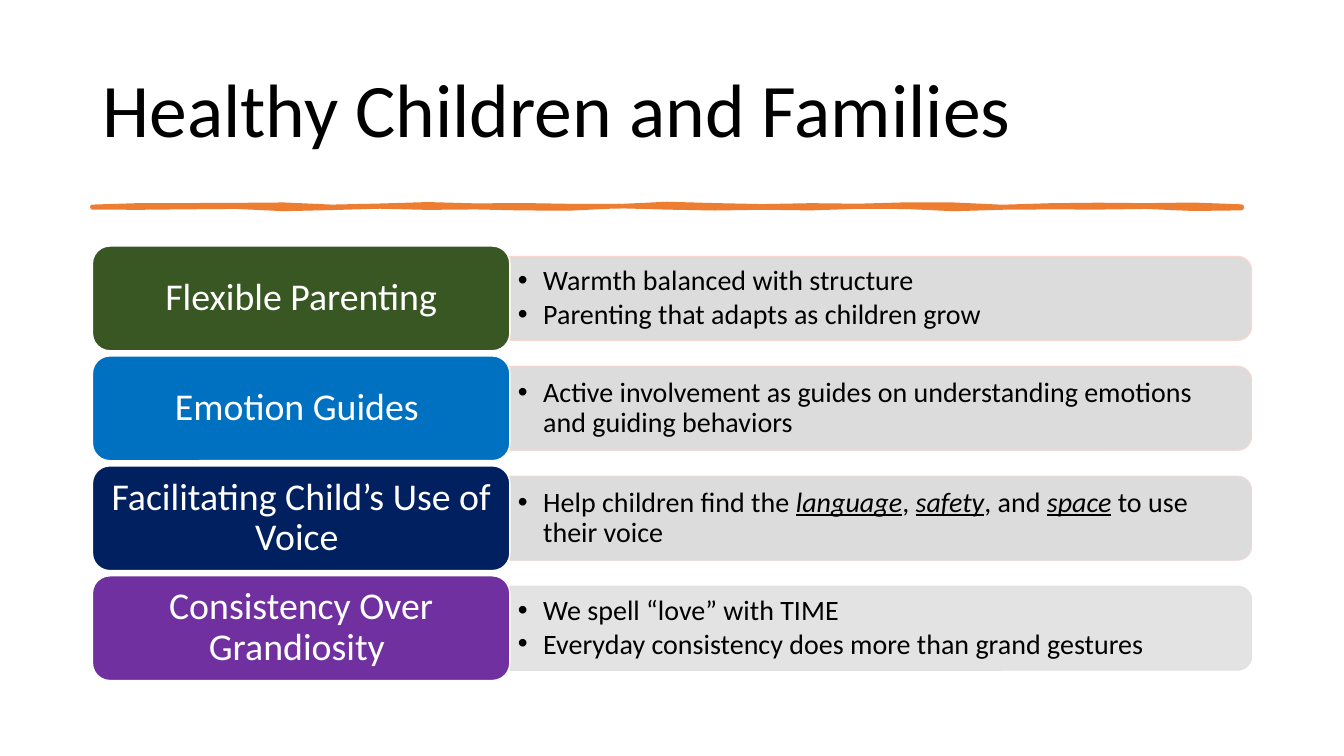
from dataclasses import dataclass
from math import sin
from lxml import etree
from pptx import Presentation
from pptx import util as u
from pptx.dml.color import RGBColor
from pptx.enum import shapes, text
from pptx.oxml import ns

Cm, Pt = u.Cm, u.Pt


@dataclass(frozen=True)
class Theme:
    font: str = "Calibri"
    ink: str = "000000"
    pale: str = "FFFFFF"
    brush: str = "ED7D31"
    head: float = 54
    label: float = 27
    body: float = 20


THEME = Theme()

# label, label fill, bar fill, bar edge, points; asterisks mark stressed words
ROWS = [
    ("Flexible Parenting", "385723", "D9D9D9", "F8D7CE",
     ["Warmth balanced with structure",
      "Parenting that adapts as children grow"]),
    ("Emotion Guides ", "0070C0", "D9D9D9", "F1D8D4",
     ["Active involvement as guides on understanding emotions "
      "and guiding behaviors"]),
    ("Facilitating Child’s Use of Voice ", "002060", "D9D9D9", "E9DBDA",
     ["Help children find the *language*, *safety*, and *space* "
      "to use their voice"]),
    ("Consistency Over Grandiosity ", "7030A0", "E1E1E1", "E1E1E1",
     ["We spell “love” with TIME",
      "Everyday consistency does more than grand gestures"]),
]


def sub(node, tag, **attrs):
    return etree.SubElement(node, ns.qn(tag), attrs)


def paint(shape, fill, edge, width, alpha=None):
    shape.shadow.inherit = False
    shape.fill.solid()
    shape.line.width = Pt(width)
    shape.line.fill.solid()
    for part, hue in ((shape.fill, fill), (shape.line.fill, edge)):
        part.fore_color.rgb = RGBColor.from_string(hue)
    if alpha:
        for node in shape._element.spPr.iter(ns.qn("a:srgbClr")):
            sub(node, "a:alpha", val=str(alpha * 1000))


def setup(shape, side, edge):
    """Wrap and centre the text vertically, with these insets in cm."""
    frame = shape.text_frame
    frame.word_wrap = True
    frame.vertical_anchor = text.MSO_ANCHOR.MIDDLE
    frame.margin_left = frame.margin_right = Cm(side)
    frame.margin_top = frame.margin_bottom = Cm(edge)
    return frame


def style(para, size, hue, align=text.PP_ALIGN.LEFT):
    para.alignment = align
    para.line_spacing = 0.9
    para.font.name = THEME.font
    para.font.size = Pt(size)
    para.font.color.rgb = RGBColor.from_string(hue)


def title(slide, words, x, y, w, h):
    box = slide.shapes.add_textbox(Cm(x), Cm(y), Cm(w), Cm(h))
    para = setup(box, 0.25, 0.13).paragraphs[0]
    para.text = words
    style(para, THEME.head, THEME.ink)


def stroke(slide, x, y, w, h, steps=24):
    """Draw a brush stroke whose two edges waver apart."""
    def wave(pos, shift):
        return 0.02 * (sin(pos * 1.1 + shift) + sin(pos * 1.9 + 2 * shift))

    xs = [w * i / steps for i in range(steps + 1)]
    top = [(x + p, y + wave(p, 1)) for p in xs]
    low = [(x + p, y + h + wave(p, 2.2)) for p in reversed(xs)]
    pts = [(Cm(a), Cm(b)) for a, b in top + low]
    form = slide.shapes.build_freeform(*pts[0])
    form.add_line_segments(pts[1:], close=True)
    shape = form.convert_to_shape()
    paint(shape, THEME.brush, THEME.brush, 3.25)
    sub(shape.line._ln, "a:round")


def bar(slide, points, fill, edge, x, y, w, h):
    # The preset stands upright, so it is turned about its centre.
    shape = slide.shapes.add_shape(
        shapes.MSO_SHAPE.ROUND_2_SAME_RECTANGLE,
        Cm(x + (w - h) / 2), Cm(y + (h - w) / 2), Cm(h), Cm(w))
    shape.rotation = 90
    paint(shape, fill, edge, 1, alpha=90)

    box = slide.shapes.add_textbox(Cm(x), Cm(y + 0.1), Cm(w - 0.1), Cm(h - 0.2))
    frame = setup(box, 0.2, 0.1)
    for i, point in enumerate(points):
        para = frame.add_paragraph() if i else frame.paragraphs[0]
        for j, part in enumerate(point.split("*")):
            run = para.add_run()
            run.text = part
            if j % 2:
                run.font.italic = run.font.underline = True
        props = para._p.get_or_add_pPr()
        props.set("marL", str(Cm(0.64)))
        props.set("indent", str(Cm(-0.64)))
        sub(props, "a:buFont", typeface="Arial")
        sub(props, "a:buChar", char="•")
        para.space_after = Pt(2.5)
        style(para, THEME.body, THEME.ink)


def label(slide, words, fill, x, y, w, h):
    shape = slide.shapes.add_shape(
        shapes.MSO_SHAPE.ROUNDED_RECTANGLE, Cm(x), Cm(y), Cm(w), Cm(h))
    paint(shape, fill, THEME.pale, 1)
    para = setup(shape, 0.28, 0.15).paragraphs[0]
    para.text = words
    style(para, THEME.label, THEME.pale, text.PP_ALIGN.CENTER)


def table(slide, rows, x, y, w, h):
    """Stack the rows evenly: a label, and a lower bar beside it."""
    gap, side = 0.13, 10.52
    tall = (h - gap * (len(rows) - 1)) / len(rows)
    thin = tall * 0.8
    for i, (words, hue, fill, edge, points) in enumerate(rows):
        top = y + i * (tall + gap)
        bar(slide, points, fill, edge,
            x + side, top + (tall - thin) / 2, w - side, thin)
        label(slide, words, hue, x, top, side, tall)


def main():
    deck = Presentation()
    deck.slide_width, deck.slide_height = Cm(33.87), Cm(19.05)
    slide = deck.slides.add_slide(deck.slide_layouts[6])
    title(slide, "Healthy Children and Families", 2.33, 1.01, 29.21, 3.68)
    stroke(slide, 2.33, 5.18, 28.96, 0.05)
    table(slide, ROWS, 2.33, 6.2, 29.21, 10.95)
    deck.save("out.pptx")


if __name__ == "__main__":
    main()
